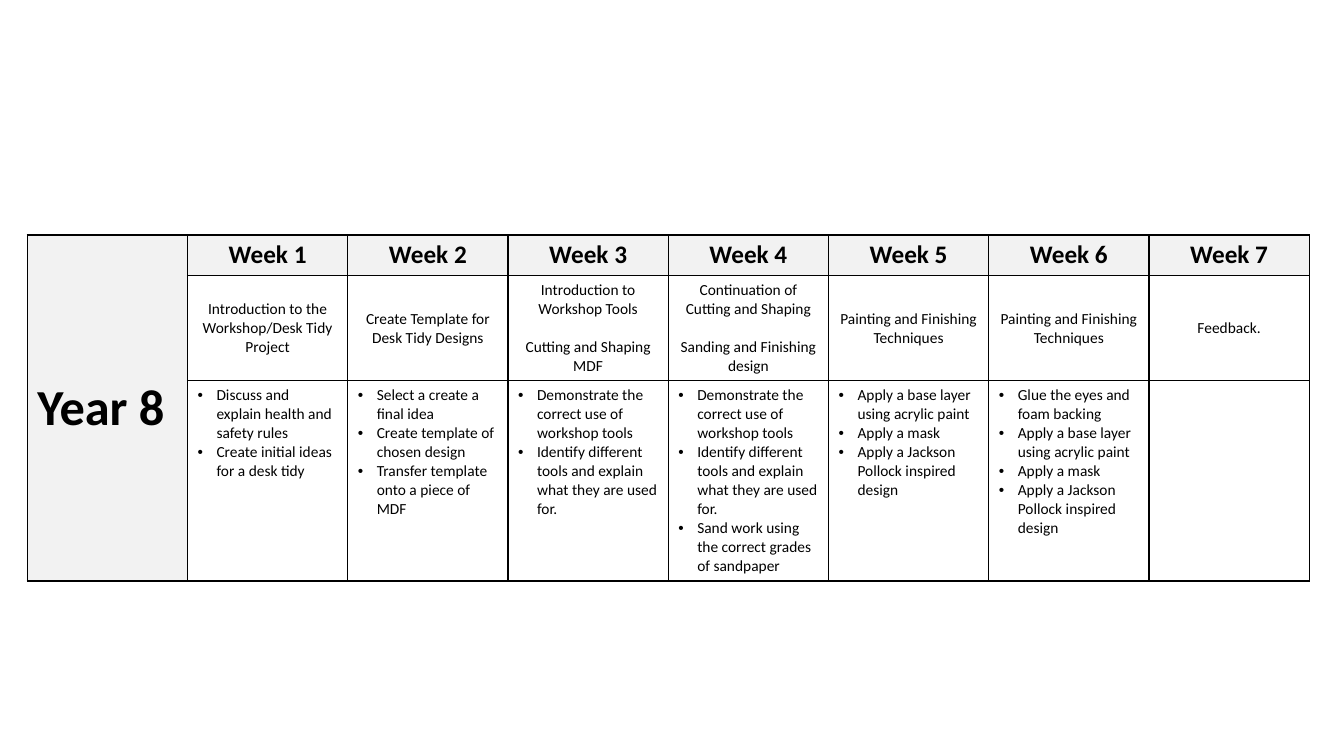
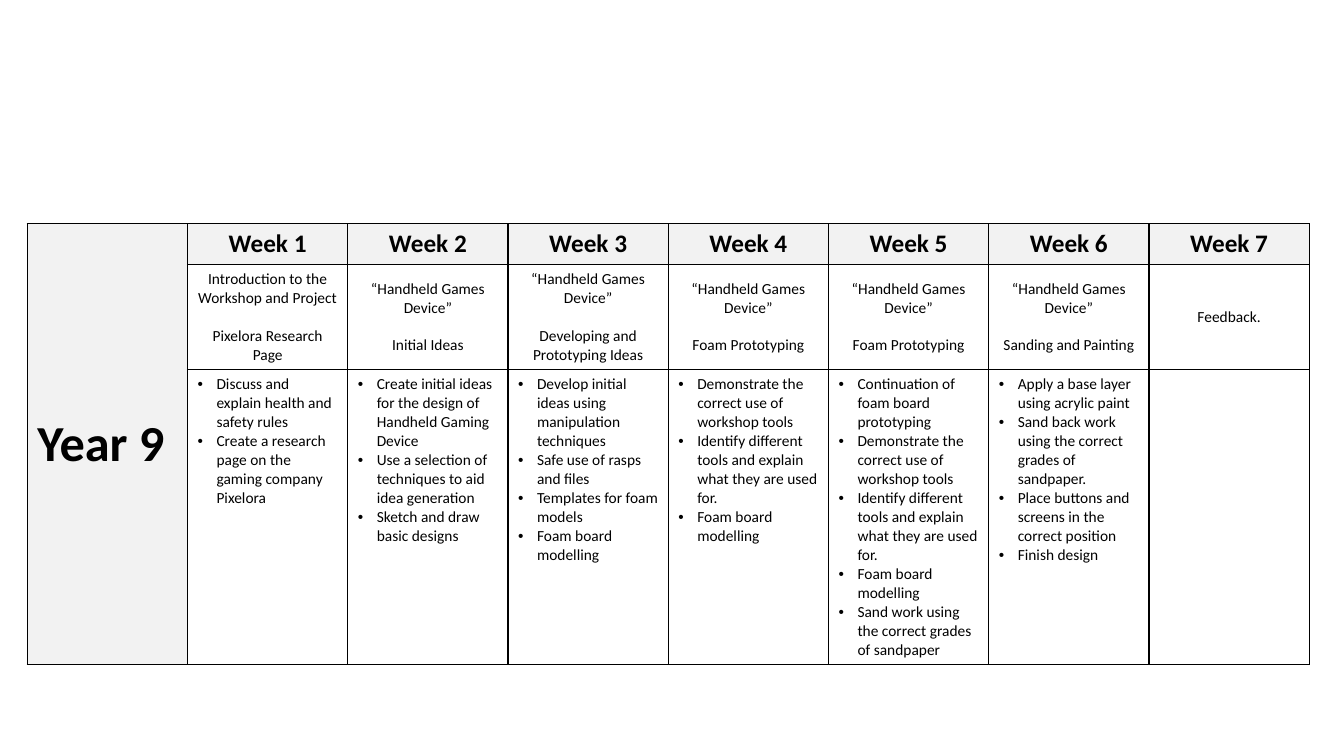
"""Build the Year 8 and Year 9 workshop schemes of work, one table per slide."""
import lxml.etree
import pptx
import pptx.dml.color
import pptx.enum.text
import pptx.oxml
import pptx.oxml.ns
import pptx.util

Pt = pptx.util.Pt
ALIGN = pptx.enum.text.PP_ALIGN
ANCHOR = pptx.enum.text.MSO_ANCHOR

BLACK = pptx.dml.color.RGBColor(0x00, 0x00, 0x00)
WHITE = pptx.dml.color.RGBColor(0xFF, 0xFF, 0xFF)
HEADING_GREY = pptx.dml.color.RGBColor(0xF2, 0xF2, 0xF2)

SAFETY = "Discuss and explain health and safety rules"
TOOL_USE = "Demonstrate the correct use of workshop tools"
TOOL_NAMES = "Identify different tools and explain what they are used for."
SANDING = "Sand work using the correct grades of sandpaper"
BASE_LAYER = "Apply a base layer using acrylic paint"
MASK = "Apply a mask"
POLLOCK = "Apply a Jackson Pollock inspired design"
FOAM_MODEL = "Foam board modelling"
DEVICE = "“Handheld Games Device”"
FINISHING = "Painting and Finishing Techniques"

SCHEMES = [
    {
        "year": "Year 8",
        "top": 167.8,
        "task_height": 142.8,
        "weeks": [
            (["Introduction to the Workshop/Desk Tidy Project"],
             [SAFETY, "Create initial ideas for a desk tidy"]),
            (["Create Template for Desk Tidy Designs"],
             ["Select a create a final idea",
              "Create template of chosen design",
              "Transfer template onto a piece of MDF"]),
            (["Introduction to Workshop Tools", "Cutting and Shaping MDF"],
             [TOOL_USE, TOOL_NAMES]),
            (["Continuation of Cutting and Shaping",
              "Sanding and Finishing design"],
             [TOOL_USE, TOOL_NAMES, SANDING]),
            ([FINISHING], [BASE_LAYER, MASK, POLLOCK]),
            ([FINISHING],
             ["Glue the eyes and foam backing", BASE_LAYER, MASK, POLLOCK]),
            (["Feedback."], []),
        ],
    },
    {
        "year": "Year 9",
        "top": 159.8,
        "task_height": 210.8,
        "weeks": [
            (["Introduction to the Workshop and Project",
              "Pixelora Research Page"],
             [SAFETY,
              "Create a research page on the gaming company Pixelora"]),
            ([DEVICE, "Initial Ideas"],
             ["Create initial ideas for the design of Handheld Gaming Device",
              "Use a selection of techniques to aid idea generation",
              "Sketch and draw basic designs"]),
            ([DEVICE, "Developing and Prototyping Ideas"],
             ["Develop initial ideas using manipulation techniques",
              "Safe use of rasps and files",
              "Templates for foam models",
              FOAM_MODEL]),
            ([DEVICE, "Foam Prototyping"],
             [TOOL_USE, TOOL_NAMES, FOAM_MODEL]),
            ([DEVICE, "Foam Prototyping"],
             ["Continuation of foam board prototyping",
              TOOL_USE, TOOL_NAMES, FOAM_MODEL, SANDING]),
            ([DEVICE, "Sanding and Painting"],
             [BASE_LAYER,
              "Sand back work using the correct grades of sandpaper.",
              "Place buttons and screens in the correct position",
              "Finish design"]),
            (["Feedback."], []),
        ],
    },
]

SLIDE_SIZE = (Pt(960), Pt(540))
TABLE_LEFT = 19.5
COLUMN_WIDTH = 114.48
WEEK_HEIGHT = 29.25
TOPIC_HEIGHT = 75
TOPIC_GAP = Pt(13.4)
BULLET_INDENT = Pt(13.5)
BORDER_WIDTH = Pt(1)

BASE_FONT = {"name": "Calibri", "bold": False, "size": Pt(11)}
STYLES = {
    "year": {"fill": HEADING_GREY, "anchor": ANCHOR.MIDDLE,
             "align": ALIGN.LEFT, "font": {"size": Pt(36), "bold": True}},
    "week": {"fill": HEADING_GREY, "anchor": ANCHOR.TOP,
             "align": ALIGN.CENTER, "font": {"size": Pt(18), "bold": True}},
    "topic": {"fill": WHITE, "anchor": ANCHOR.MIDDLE,
              "align": ALIGN.CENTER, "gap": TOPIC_GAP},
    "task": {"fill": WHITE, "anchor": ANCHOR.TOP,
             "align": ALIGN.LEFT, "bullet": True},
}


def add_borders(cell):
    """Draw a solid black line on all four sides of a cell."""
    properties = cell._tc.get_or_add_tcPr()
    for side in ("lnL", "lnR", "lnT", "lnB"):
        properties.append(pptx.oxml.parse_xml(
            f'<a:{side} {pptx.oxml.ns.nsdecls("a")} w="{BORDER_WIDTH}">'
            f'<a:solidFill><a:srgbClr val="{BLACK}"/></a:solidFill>'
            f'</a:{side}>'))


def add_bullet(paragraph):
    """Give a paragraph a round bullet with a hanging indent."""
    properties = paragraph._p.get_or_add_pPr()
    properties.set("marL", str(BULLET_INDENT))
    properties.set("indent", str(-BULLET_INDENT))
    for tag, key, value in (("a:buFont", "typeface", "Arial"),
                            ("a:buChar", "char", "•")):
        element = lxml.etree.SubElement(properties, pptx.oxml.ns.qn(tag))
        element.set(key, value)


def fill_cell(cell, lines, style):
    """Format a cell and write one paragraph for each line."""
    add_borders(cell)
    cell.fill.solid()
    cell.fill.fore_color.rgb = style["fill"]
    cell.vertical_anchor = style["anchor"]
    for index, line in enumerate(lines):
        frame = cell.text_frame
        paragraph = frame.add_paragraph() if index else frame.paragraphs[0]
        paragraph.alignment = style["align"]
        if index and "gap" in style:
            paragraph.space_before = style["gap"]
        if style.get("bullet"):
            add_bullet(paragraph)
        run = paragraph.add_run()
        run.text = line
        for name, value in {**BASE_FONT, **style.get("font", {})}.items():
            setattr(run.font, name, value)
        run.font.color.rgb = BLACK


def add_scheme(slide, scheme):
    """Lay out one year's weeks, topics and tasks as a table."""
    weeks = scheme["weeks"]
    heights = (WEEK_HEIGHT, TOPIC_HEIGHT, scheme["task_height"])
    column_count = len(weeks) + 1
    table = slide.shapes.add_table(
        len(heights), column_count, Pt(TABLE_LEFT), Pt(scheme["top"]),
        Pt(COLUMN_WIDTH * column_count), Pt(sum(heights))).table
    table.first_row = table.horz_banding = False
    for column in table.columns:
        column.width = Pt(COLUMN_WIDTH)
    for row, height in zip(table.rows, heights):
        row.height = Pt(height)

    table.cell(0, 0).merge(table.cell(len(heights) - 1, 0))
    for row in range(len(heights)):
        fill_cell(table.cell(row, 0), [] if row else [scheme["year"]],
                  STYLES["year"])
    for number, (topics, tasks) in enumerate(weeks, 1):
        parts = (("week", [f"Week {number}"]), ("topic", topics),
                 ("task", tasks))
        for row, (part, lines) in enumerate(parts):
            fill_cell(table.cell(row, number), lines, STYLES[part])


def main():
    """Save one slide for each scheme."""
    deck = pptx.Presentation()
    deck.slide_width, deck.slide_height = SLIDE_SIZE
    blank_layout = deck.slide_layouts[6]
    for scheme in SCHEMES:
        add_scheme(deck.slides.add_slide(blank_layout), scheme)
    deck.save("out.pptx")


if __name__ == "__main__":
    main()
